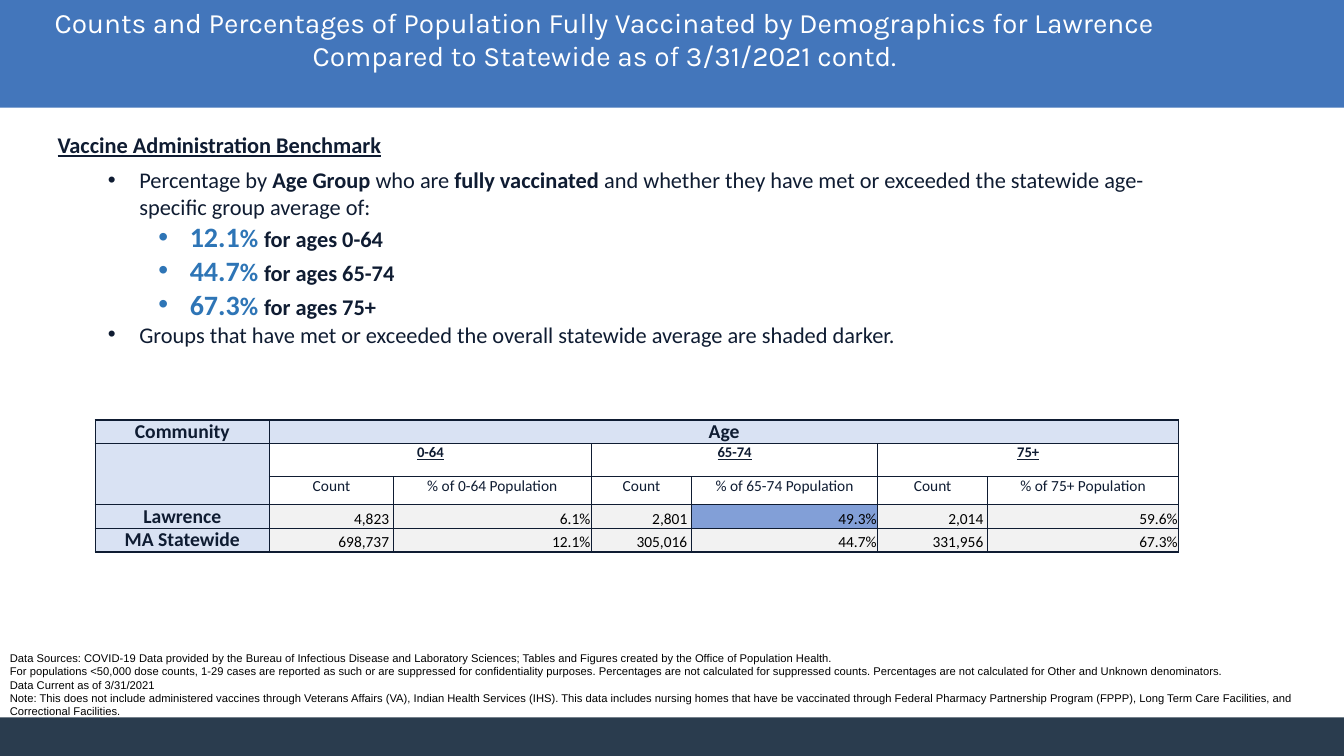
from dataclasses import dataclass, field
from typing import Any

from lxml.etree import SubElement
from pptx import Presentation
from pptx.dml.color import RGBColor
from pptx.enum.shapes import MSO_SHAPE
from pptx.enum.text import MSO_ANCHOR, MSO_AUTO_SIZE, PP_ALIGN
from pptx.oxml.ns import qn
from pptx.util import Pt

COLORS = {
    "band": "4376BB", "footer": "2A3C4E", "white": "FFFFFF", "navy": "0F1C32",
    "accent": "2E75B6", "black": "000000", "label": "D9E2F3", "data": "F2F2F2",
    "met": "829FD7",
}

# Text formats
TITLE = {"name": "Karla", "size": Pt(20), "bold": False, "color": "white"}
BODY = {"name": "Calibri", "size": Pt(16), "bold": False, "color": "navy"}
STRONG = BODY | {"bold": True}
HEADING = STRONG | {"underline": True}
RATE = STRONG | {"size": Pt(20), "color": "accent"}
PERCENT = RATE | {"size": Pt(18)}
SOURCE = {"name": "Arial", "size": Pt(8), "color": "black"}
LABEL = STRONG | {"size": Pt(14)}
AGE = HEADING | {"size": Pt(10.5)}
COLUMN = BODY | {"size": Pt(11)}
DATA = COLUMN | {"color": "black"}


@dataclass
class Line:
    runs: list[tuple[str, dict[str, Any]]]
    level: int = 0
    spacing: dict[str, Any] = field(default_factory=dict)


@dataclass
class CellStyle:
    font: dict[str, Any]
    fill: str
    layout: dict[str, Any]


CENTERED = {"margin_left": Pt(5.76), "margin_right": Pt(5.76),
            "margin_top": Pt(0), "margin_bottom": Pt(0)}
BOTTOM = CENTERED | {"vertical_anchor": MSO_ANCHOR.BOTTOM}
FIGURE = BOTTOM | {"margin_left": Pt(0.7), "margin_right": Pt(0.7), "margin_top": Pt(0.7)}
COUNT = FIGURE | {"margin_right": Pt(3)}


def set_values(target: Any, values: dict[str, Any]) -> None:
    for name, value in values.items():
        if name == "color":
            target.color.rgb = RGBColor.from_string(COLORS[value])
        else:
            setattr(target, name, value)


def add_run(paragraph: Any, text: str, values: dict[str, Any]) -> None:
    run = paragraph.add_run()
    run.text = text
    set_values(run.font, values)


def add_band(slide: Any, top: float, height: float, color: str) -> None:
    shape = slide.shapes.add_shape(MSO_SHAPE.RECTANGLE, Pt(0), Pt(top), Pt(960), Pt(height))
    shape.shadow.inherit = False
    shape.fill.solid()
    shape.fill.fore_color.rgb = RGBColor.from_string(COLORS[color])
    shape.line.fill.background()


def add_text(slide: Any, box: tuple[float, ...], lines: list[Line]) -> None:
    frame = slide.shapes.add_textbox(*map(Pt, box)).text_frame
    frame.word_wrap = True
    for index, line in enumerate(lines):
        paragraph = frame.add_paragraph() if index else frame.paragraphs[0]
        paragraph.level = line.level
        set_values(paragraph, line.spacing)
        if line.level:
            properties = paragraph._p.get_or_add_pPr()
            properties.set("marL", str(Pt(22.5 + 36 * line.level)))
            properties.set("indent", str(-Pt(22.5)))
            SubElement(properties, qn("a:buFont")).set("typeface", "Arial")
            SubElement(properties, qn("a:buChar")).set("char", "•")
        for text, values in line.runs:
            add_run(paragraph, text, values)


def format_cell(cell: Any, text: str, style: CellStyle) -> None:
    properties = cell._tc.get_or_add_tcPr()
    for side in ("lnL", "lnR", "lnT", "lnB"):
        border = SubElement(properties, qn(f"a:{side}"))
        border.set("w", str(Pt(1)))
        SubElement(SubElement(border, qn("a:solidFill")), qn("a:srgbClr")).set("val", COLORS["navy"])
    set_values(cell, style.layout)
    cell.fill.solid()
    cell.fill.fore_color.rgb = RGBColor.from_string(COLORS[style.fill])
    paragraph = cell.text_frame.paragraphs[0]
    is_figure = style.font is DATA
    paragraph.alignment = PP_ALIGN.RIGHT if is_figure else PP_ALIGN.CENTER
    if text:
        add_run(paragraph, text, style.font)


def cell_style(row: int, column: int, text: str) -> CellStyle:
    if row == 0 or column == 0:
        return CellStyle(LABEL, "label", BOTTOM if row > 2 else CENTERED)
    if row < 3:
        return CellStyle(AGE if row == 1 else COLUMN, "white", CENTERED)
    return CellStyle(DATA, "met" if text == "49.3%" else "data", COUNT if column % 2 else FIGURE)


def add_age_table(slide: Any) -> None:
    ages = ["0-64", "65-74", "75+"]
    rows = [
        ["Community", "Age"] + [""] * 5,
        [""] + [text for age in ages for text in (age, "")],
        [""] + [text for age in ages for text in ("Count", f"% of {age} Population")],
        ["Lawrence", "4,823", "6.1%", "2,801", "49.3%", "2,014", "59.6%"],
        ["MA Statewide", "698,737", "12.1%", "305,016", "44.7%", "331,956", "67.3%"],
    ]
    widths = [124.5, 88.5, 141.5, 71.5, 133, 78.5, 136.5]
    heights = [17, 23.5, 20, 16.5, 17]
    table = slide.shapes.add_table(len(rows), len(widths), Pt(68), Pt(300),
                                   Pt(sum(widths)), Pt(sum(heights))).table
    table.first_row = table.horz_banding = False
    for column, width in zip(table.columns, widths):
        column.width = Pt(width)
    for row, height in zip(table.rows, heights):
        row.height = Pt(height)
    for row, texts in enumerate(rows):
        for column, text in enumerate(texts):
            format_cell(table.cell(row, column), text, cell_style(row, column, text))
    # Joined header cells
    table.cell(0, 1).merge(table.cell(0, 6))
    table.cell(1, 0).merge(table.cell(2, 0))
    for column in (1, 3, 5):
        table.cell(1, column).merge(table.cell(1, column + 1))


def main() -> None:
    presentation = Presentation()
    presentation.slide_width, presentation.slide_height = Pt(960), Pt(540)
    slide = presentation.slides.add_slide(presentation.slide_layouts[5])

    # Colour bands at top and bottom
    add_band(slide, 0, 77, "band")
    add_band(slide, 512.5, 27.5, "footer")

    # Title, in front of the top band
    title = slide.shapes.title
    set_values(title, {"left": Pt(0), "top": Pt(0), "width": Pt(864), "height": Pt(72)})
    title.element.getparent().append(title.element)
    set_values(title.text_frame, {"vertical_anchor": MSO_ANCHOR.TOP, "word_wrap": True,
                                  "auto_size": MSO_AUTO_SIZE.NONE})
    paragraph = title.text_frame.paragraphs[0]
    paragraph.alignment = PP_ALIGN.CENTER
    add_run(paragraph, "Counts and Percentages of Population Fully Vaccinated by Demographics "
            "for Lawrence Compared to Statewide as of 3/31/2021 contd.", TITLE)

    # Benchmark text
    benchmarks = [("12.1", "0-64"), ("44.7", "65-74"), ("67.3", "75+")]
    add_text(slide, (34, 90, 830, 185), [
        Line([("Vaccine Administration Benchmark", HEADING)], spacing={"space_after": Pt(6)}),
        Line([("Percentage by ", BODY), ("Age Group ", STRONG), ("who are", BODY),
              (" fully vaccinated", STRONG),
              (" and whether they have met or exceeded the statewide age-specific "
               "group average of:", BODY)], 1),
        *(Line([(rate, RATE), ("% ", PERCENT), (f"for ages {age}", STRONG)], 2)
          for rate, age in benchmarks),
        Line([("Groups that have met or exceeded the overall statewide average "
               "are shaded darker.", BODY)], 1),
    ])

    add_age_table(slide)

    # Sources and notes
    sources = [
        "Data Sources: COVID-19 Data provided by the Bureau of Infectious Disease and Laboratory "
        "Sciences; Tables and Figures created by the Office of Population Health.",
        "For populations <50,000 dose counts, 1-29 cases are reported as such or are suppressed for "
        "confidentiality purposes. Percentages are not calculated for suppressed counts. "
        "Percentages are not calculated for Other and Unknown denominators.",
        "Data Current as of 3/31/2021",
        "Note: This does not include administered vaccines through Veterans Affairs (VA), Indian "
        "Health Services (IHS). This data includes nursing homes that have be vaccinated through "
        "Federal Pharmacy Partnership Program (FPPP), Long Term Care Facilities, and "
        "Correctional Facilities.",
    ]
    add_text(slide, (0, 461.5, 952, 55.5), [Line([(text, SOURCE)]) for text in sources])

    presentation.save("out.pptx")


if __name__ == "__main__":
    main()
